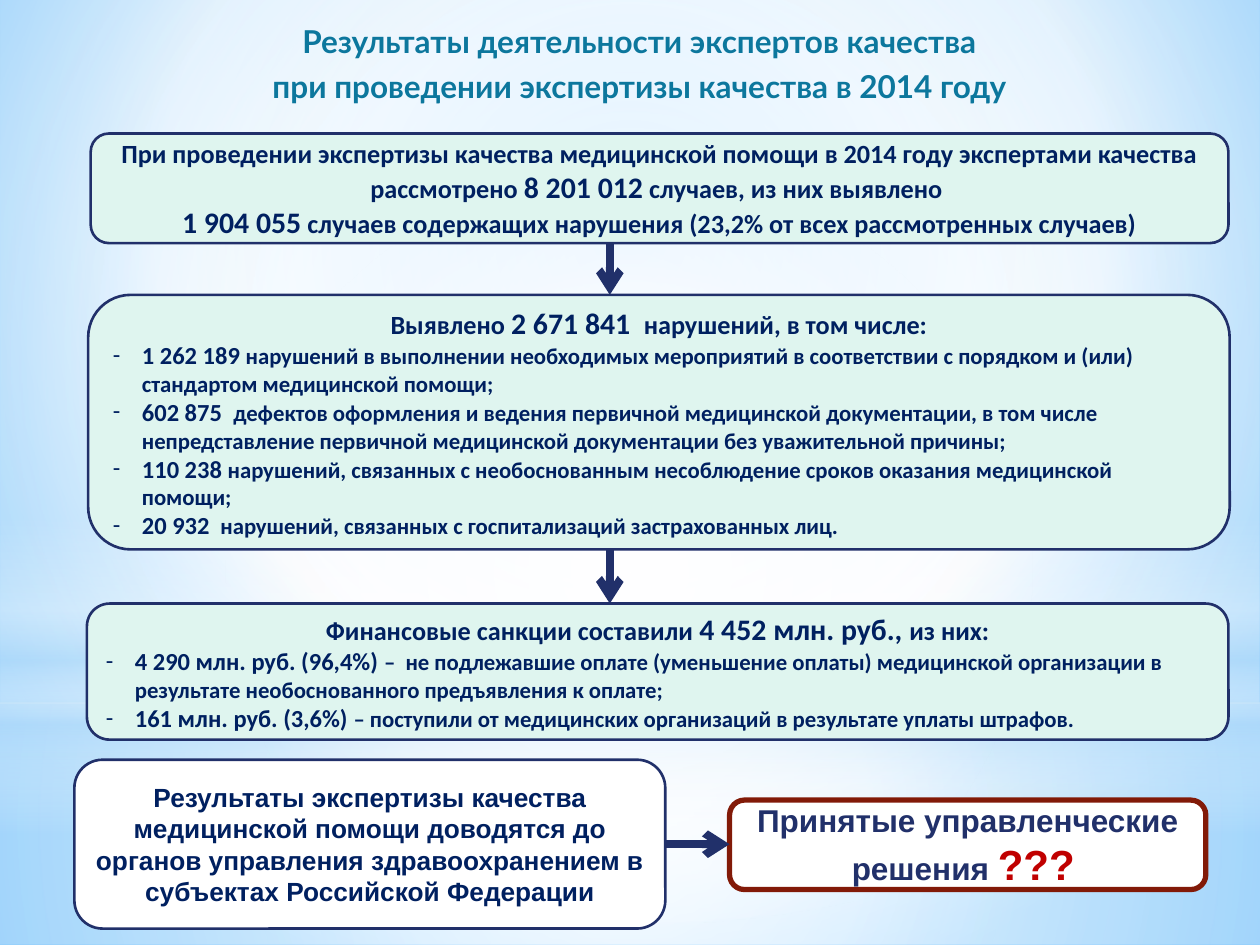
from lxml.etree import SubElement
from pptx import Presentation
from pptx.dml.color import RGBColor
from pptx.enum.shapes import MSO_CONNECTOR, MSO_SHAPE
from pptx.enum.text import MSO_ANCHOR, MSO_AUTO_SIZE, PP_ALIGN
from pptx.oxml.ns import qn
from pptx.util import Inches, Pt

WIDTH, HEIGHT = Inches(10), Inches(7.5)
COLUMNS, ROWS = 100, 75
NAVY, TEXT, MINT, WHITE = "21306A", "002060", "DFF5EF", "FFFFFF"
SKY = "B4DCFA"
HEAD, FIGURE, ITEM_FIGURE, ITEM = 15, 17, 14, 13
CENTRE = (50, 50, 50, 50)


def color(value):
    return RGBColor.from_string(value)


def cells(left, top, width, height):
    """Turn grid columns and rows into slide lengths."""
    return (int(WIDTH * left / COLUMNS), int(HEIGHT * top / ROWS),
            int(WIDTH * width / COLUMNS), int(HEIGHT * height / ROWS))


def set_gradient(parent, stops, focus=None):
    """Replace a solid fill by a gradient of (position, colour, opacity) stops.

    With a focus (left, top, right, bottom) it is circular, else vertical.
    """
    solid = parent.find(qn("a:solidFill"))
    gradient = parent.makeelement(qn("a:gradFill"), {"rotWithShape": "1"})
    parent.replace(solid, gradient)
    stop_list = SubElement(gradient, qn("a:gsLst"))
    for position, value, opacity in stops:
        stop = SubElement(stop_list, qn("a:gs"), pos=str(position * 1000))
        tint = SubElement(stop, qn("a:srgbClr"), val=value)
        if opacity < 100:
            SubElement(tint, qn("a:alpha"), val=str(opacity * 1000))
    if focus:
        route = SubElement(gradient, qn("a:path"), {"path": "circle"})
        sides = {side: str(share * 1000) for side, share in zip("ltrb", focus)}
        SubElement(route, qn("a:fillToRect"), sides)
    else:
        SubElement(gradient, qn("a:lin"), ang="5400000", scaled="0")


def set_background(page):
    page.background.fill.solid()
    set_gradient(page._element.find(".//" + qn("p:bgPr")),
                 [(0, "9ED5FF", 100), (60, WHITE, 100), (100, "5BB9FF", 100)],
                 (20, 10, 20, 60))


def add_glow(page, area, stops, focus=CENTRE, kind=MSO_SHAPE.RECTANGLE):
    glow = page.shapes.add_shape(kind, *cells(*area))
    glow.shadow.inherit = False
    glow.line.fill.background()
    glow.fill.solid()
    set_gradient(glow._element.spPr, stops, focus)


def add_span(para, text, size, font="Calibri", ink=TEXT):
    span = para.add_run()
    span.text = text
    span.font.size = Pt(size)
    span.font.name = font
    span.font.bold = True
    span.font.color.rgb = color(ink)


def set_dash(para):
    props = para._p.get_or_add_pPr()
    indent = Inches(0.23)
    props.set("marL", str(indent))
    props.set("indent", str(-indent))
    SubElement(props, qn("a:buFont"), typeface="Calibri")
    SubElement(props, qn("a:buChar"), char="-")


def add_box(page, area, paragraphs, fill=MINT, outline=NAVY, weight=1.5):
    """Draw a rounded box; each paragraph is a list of span arguments.

    Paragraphs that open with an item-sized figure are dashed list items.
    """
    box = page.shapes.add_shape(MSO_SHAPE.ROUNDED_RECTANGLE, *cells(*area))
    box.shadow.inherit = False
    box.fill.solid()
    box.fill.fore_color.rgb = color(fill)
    box.line.color.rgb = color(outline)
    box.line.width = Pt(weight)
    frame = box.text_frame
    frame.word_wrap = True
    frame.vertical_anchor = MSO_ANCHOR.MIDDLE
    for number, spans in enumerate(paragraphs):
        para = frame.add_paragraph() if number else frame.paragraphs[0]
        if spans[0][1] == ITEM_FIGURE:
            para.alignment = PP_ALIGN.LEFT
            set_dash(para)
        else:
            para.alignment = PP_ALIGN.CENTER
        for span in spans:
            add_span(para, *span)


def add_arrow(page, start, end):
    arrow = page.shapes.add_connector(
        MSO_CONNECTOR.STRAIGHT, *cells(*start, *end))
    arrow.line.color.rgb = color(NAVY)
    arrow.line.width = Pt(4.5)
    SubElement(arrow.line._get_or_add_ln(), qn("a:tailEnd"), type="arrow")
    SubElement(arrow._element.spPr, qn("a:effectLst"))


def set_title(page, area, lines):
    title = page.shapes.title
    title.left, title.top, title.width, title.height = cells(*area)
    frame = title.text_frame
    frame.word_wrap = True
    frame.auto_size = MSO_AUTO_SIZE.NONE
    frame.vertical_anchor = MSO_ANCHOR.MIDDLE
    for number, text in enumerate(lines):
        para = frame.add_paragraph() if number else frame.paragraphs[0]
        para.alignment = PP_ALIGN.CENTER
        para.line_spacing = 1.2
        add_span(para, text, 18, "Lato", "0C779D")
    page.shapes._spTree.append(title._element)  # in front of the glows


def main():
    deck = Presentation()
    deck.slide_width, deck.slide_height = WIDTH, HEIGHT
    page = deck.slides.add_slide(deck.slide_layouts[5])

    set_background(page)
    add_glow(page, (0, 55.8, 100, 19.2),
             [(0, WHITE, 91), (37, WHITE, 76), (100, SKY, 79)])
    add_glow(page, (0, 0, 100, 55.8),
             [(0, WHITE, 89), (48, WHITE, 62), (100, SKY, 79)])
    add_glow(page, (0, 41.2, 100, 25),
             [(0, WHITE, 0), (29, WHITE, 30), (45, SKY, 40),
              (55, WHITE, 26), (65, SKY, 60), (100, WHITE, 0)], focus=None)
    add_glow(page, (0, 17.5, 100, 55.8), [(0, WHITE, 100), (56, WHITE, 0)],
             kind=MSO_SHAPE.OVAL)

    set_title(page, (1.1, 0.3, 99.3, 8.9),
              ["Результаты деятельности экспертов качества",
               "при проведении экспертизы качества в 2014 году"])

    add_box(page, (7.2, 10.6, 90.3, 8.7), [
        [("При проведении экспертизы качества медицинской помощи в 2014 году "
          "экспертами качества рассмотрено ", HEAD),
         ("8 201 012", FIGURE), (" случаев, из них выявлено ", HEAD)],
        [("1 904 055", FIGURE),
         (" случаев содержащих нарушения (23,2% от всех рассмотренных "
          "случаев)", HEAD)]])
    add_box(page, (7, 23.4, 90.6, 20.2), [
        [("Выявлено ", HEAD), ("2 671 841  ", FIGURE),
         ("нарушений, в том числе:", HEAD)],
        [("1 262 189 ", ITEM_FIGURE),
         ("нарушений в выполнении необходимых мероприятий в соответствии с "
          "порядком и (или) стандартом медицинской помощи;", ITEM)],
        [("602 875  ", ITEM_FIGURE),
         ("дефектов оформления и ведения первичной медицинской документации, "
          "в том числе непредставление первичной медицинской документации "
          "без уважительной причины;", ITEM)],
        [("110 238 ", ITEM_FIGURE),
         ("нарушений, связанных с необоснованным несоблюдение сроков "
          "оказания медицинской помощи;", ITEM)],
        [("20 932 ", ITEM_FIGURE),
         (" нарушений, связанных с госпитализаций застрахованных лиц.",
          ITEM)]])
    add_box(page, (6.9, 47.9, 90.6, 10.8), [
        [("Финансовые санкции составили ", HEAD),
         ("4 452 млн. руб., ", FIGURE), ("из них:", HEAD)],
        [("4 290 млн. руб. (96,4%) ", ITEM_FIGURE),
         ("–  не подлежавшие оплате (уменьшение оплаты) медицинской "
          "организации в результате необоснованного предъявления к оплате;",
          ITEM)],
        [("161 млн. руб. (3,6%) ", ITEM_FIGURE),
         ("– поступили от медицинских организаций в результате уплаты "
          "штрафов.", ITEM)]])
    add_box(page, (5.9, 60.3, 46.9, 13.4), [
        [("Результаты экспертизы качества медицинской помощи доводятся до "
          "органов управления здравоохранением в субъектах Российской "
          "Федерации", HEAD, "Arial")]], fill=WHITE)
    add_box(page, (57.9, 63.5, 37.8, 7.1), [
        [("Принятые управленческие решения ", 18, "Arial", NAVY),
         ("???", 24, "Arial", "C00000"), (" ", 18, "Arial", NAVY)]],
        fill=WHITE, outline="821A08", weight=3)

    for start, end in [((48.4, 19.4), (48.4, 23.4)),
                       ((48.4, 43.6), (48.4, 47.9)),
                       ((52.8, 67), (57.9, 67))]:
        add_arrow(page, start, end)

    deck.save("out.pptx")


if __name__ == "__main__":
    main()
